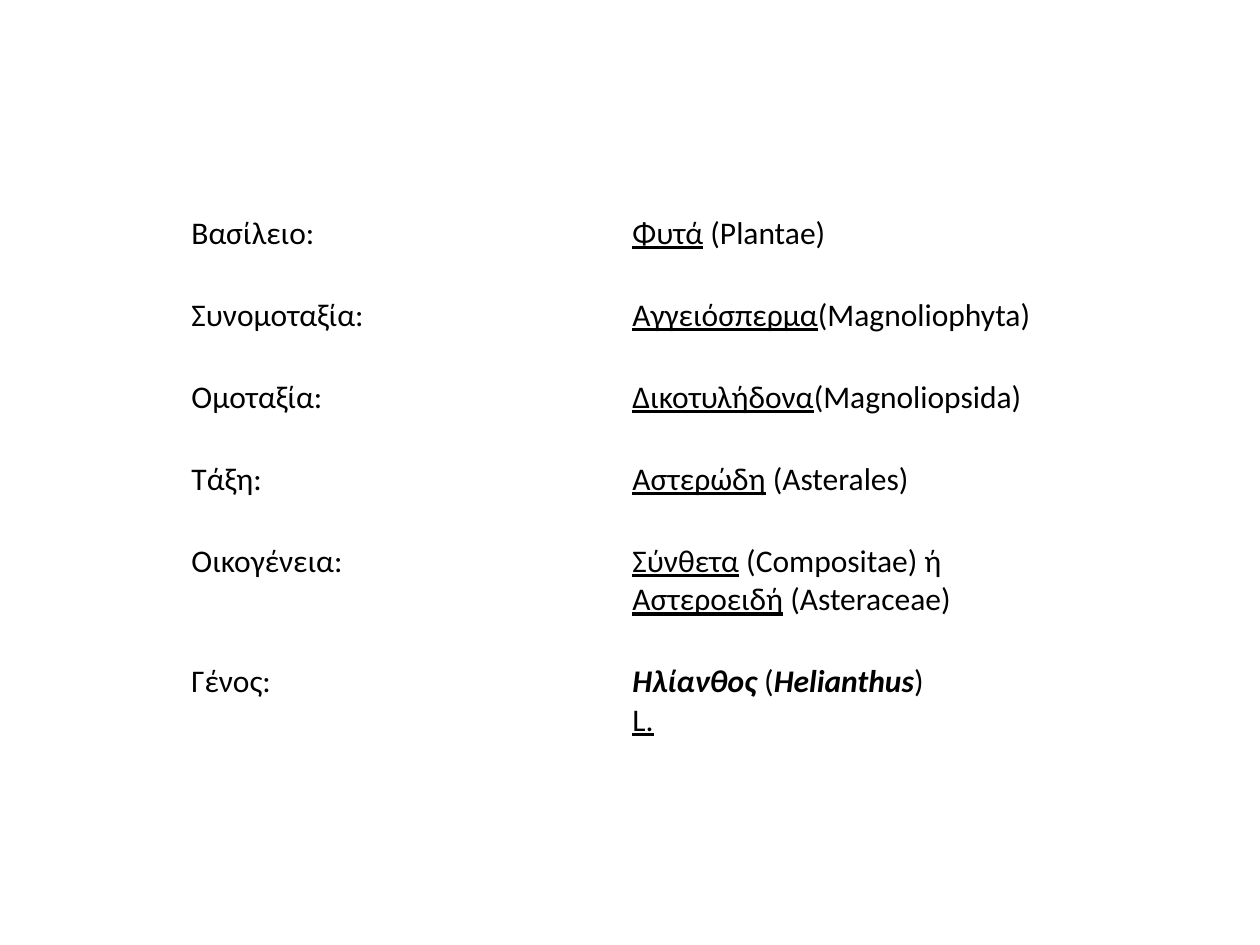
from pptx import Presentation
from pptx.dml.color import RGBColor
from pptx.enum.text import MSO_ANCHOR as Anchor
from pptx.util import Pt

FONT, SIZE, INK = "Calibri", 18, "000000"
LINE_HEIGHT, MARGIN = 22, 1.44
COLUMN_WIDTHS = (252, 240)
LINE_BREAK = ("\n", "")

# Rank, lines of room for the row, spans of the name with a style:
# u = underlined, b = bold italic, empty = plain
RANKS = [
    ("Βασίλειο:", 2, [("Φυτά", "u"), (" (Plantae)", "")]),
    ("Συνομοταξία:", 2, [("Αγγειόσπερμα", "u"), ("(Magnoliophyta)", "")]),
    ("Ομοταξία:", 2, [("Δικοτυλήδονα", "u"), ("(Magnoliopsida)", "")]),
    ("Τάξη:", 2, [("Αστερώδη", "u"), (" (Asterales)", "")]),
    ("Οικογένεια:", 3, [("Σύνθετα", "u"), (" (Compositae) ή ", ""),
                        ("Αστεροειδή", "u"), (" (Asteraceae)", "")]),
    ("Γένος:", 2, [("Ηλίανθος", "b"), (" (", ""), ("Helianthus", "b"),
                   (")", ""), LINE_BREAK, ("L.", "u")]),
]


def color(hex_string):
    return RGBColor.from_string(hex_string)


def add_span(para, text, style):
    span = para.add_run()
    span.text = text
    font = span.font
    font.name, font.size = FONT, Pt(SIZE)
    font.color.rgb = color(INK)
    font.underline = style == "u"
    font.bold = font.italic = style == "b"


def fill_cell(cell, spans):
    cell.fill.background()
    cell.vertical_anchor = Anchor.TOP
    cell.margin_left = cell.margin_right = Pt(MARGIN)
    cell.margin_top = cell.margin_bottom = Pt(MARGIN)
    para = cell.text_frame.paragraphs[0]
    for span in spans:
        if span == LINE_BREAK:
            para.add_line_break()
        else:
            add_span(para, *span)


def add_rank_table(page, left, top):
    heights = [lines * LINE_HEIGHT + 2 * MARGIN for _, lines, _ in RANKS]
    table = page.shapes.add_table(
        len(RANKS), len(COLUMN_WIDTHS), Pt(left), Pt(top),
        Pt(sum(COLUMN_WIDTHS)), Pt(sum(heights))).table
    table.first_row = table.horz_banding = False
    for column, width in zip(table.columns, COLUMN_WIDTHS):
        column.width = Pt(width)
    for row, height, (rank, _, spans) in zip(table.rows, heights, RANKS):
        row.height = Pt(height)
        fill_cell(row.cells[0], [(rank, "")])
        fill_cell(row.cells[1], spans)


def main():
    deck = Presentation()
    deck.slide_width, deck.slide_height = Pt(720), Pt(540)
    # Blank page with the classification table
    page = deck.slides.add_slide(deck.slide_layouts[6])
    add_rank_table(page, 108, 121)
    deck.save("out.pptx")


if __name__ == "__main__":
    main()
